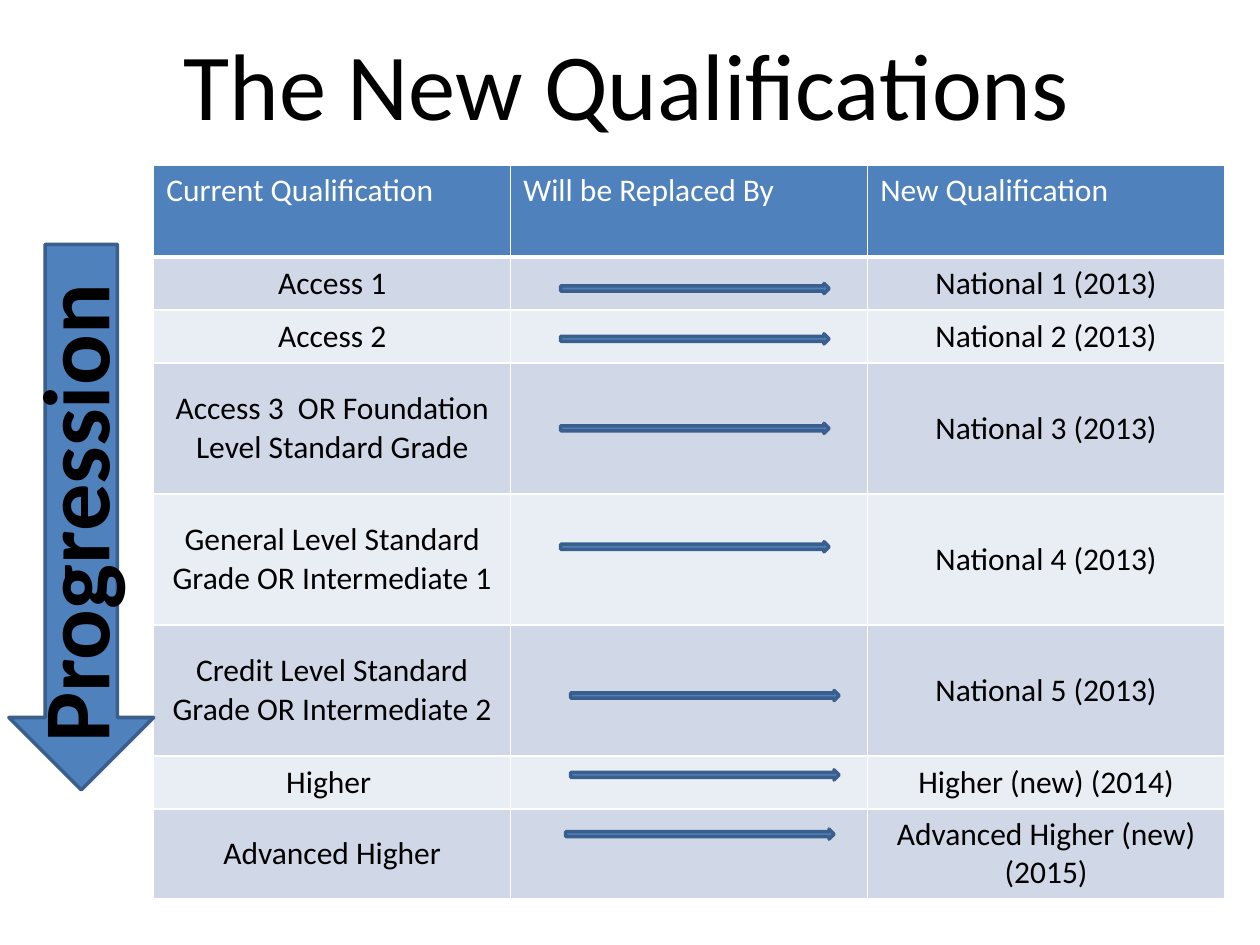
"""Build the slide that maps current qualifications to new ones."""
import lxml.etree
import pptx
import pptx.dml.color
import pptx.enum.shapes
import pptx.enum.text
import pptx.oxml.ns
import pptx.util

COLORS = {"blue": "4F81BD", "edge": "3A5F8C", "dark band": "D0D8E8",
          "light band": "E9EDF4", "white": "FFFFFF", "black": "000000"}
ROWS = [
    ("Current Qualification", "Will be Replaced By", "New Qualification", 9.73),
    ("Access 1", "", "National 1 (2013)", 5.6),
    ("Access 2", "", "National 2 (2013)", 5.6),
    ("Access 3  OR Foundation Level Standard Grade", "", "National 3 (2013)", 13.87),
    ("General Level Standard Grade OR Intermediate 1", "", "National 4 (2013)", 13.87),
    ("Credit Level Standard Grade OR Intermediate 2", "", "National 5 (2013)", 13.87),
    ("Higher ", "", "Higher (new) (2014)", 5.6),
    ("Advanced Higher", "", "Advanced Higher (new) (2015)", 5.6),
]
SHAPES = pptx.enum.shapes.MSO_SHAPE
ALIGN = pptx.enum.text.PP_ALIGN
ANCHOR = pptx.enum.text.MSO_ANCHOR

presentation = pptx.Presentation()
presentation.slide_width = pptx.util.Inches(10)
presentation.slide_height = pptx.util.Inches(7.5)
column = presentation.slide_width / 100
row = presentation.slide_height / 100
slide = presentation.slides.add_slide(presentation.slide_layouts[5])


def box(left, top, width, height):
    """Turn percentages of the slide into lengths."""
    return [round(share * unit) for share, unit in
            zip((left, top, width, height), (column, row, column, row))]


def write(paragraph, text, size, color, align, bold=False):
    """Add one formatted run to a paragraph."""
    paragraph.alignment = align
    run = paragraph.add_run()
    run.text = text
    run.font.name = "Calibri"
    run.font.size = pptx.util.Pt(size)
    run.font.bold = bold
    run.font.color.rgb = pptx.dml.color.RGBColor.from_string(COLORS[color])


title = slide.shapes.title
title.left, title.top, title.width, title.height = box(13.6, 2, 73.2, 13.47)
title.text_frame.word_wrap = True
write(title.text_frame.paragraphs[0], "The New Qualifications", 54, "black", ALIGN.LEFT)

table = slide.shapes.add_table(len(ROWS), 3, *box(12.2, 17.47, 85, 73.74)).table
for index, (*texts, height) in enumerate(ROWS):
    table.rows[index].height = round(height * row)
    header = index == 0
    fill = "blue" if header else "dark band" if index % 2 else "light band"
    for cell, text in zip(table.rows[index].cells, texts):
        properties = cell._tc.get_or_add_tcPr()
        for side in ("lnL", "lnR", "lnT", "lnB"):
            points = 3 if header and side == "lnB" else 1
            border = lxml.etree.SubElement(
                properties, pptx.oxml.ns.qn(f"a:{side}"), w=str(pptx.util.Pt(points)))
            solid = lxml.etree.SubElement(border, pptx.oxml.ns.qn("a:solidFill"))
            lxml.etree.SubElement(solid, pptx.oxml.ns.qn("a:srgbClr"), val=COLORS["white"])
        cell.fill.solid()
        cell.fill.fore_color.rgb = pptx.dml.color.RGBColor.from_string(COLORS[fill])
        cell.vertical_anchor = ANCHOR.TOP if header else ANCHOR.MIDDLE
        if text:
            write(cell.text_frame.paragraphs[0], text, 18,
                  "white" if header else "black",
                  ALIGN.LEFT if header else ALIGN.CENTER)

row_arrows = [(44.5, 30), (44.5, 35.33), (44.5, 44.8), (44.5, 57.33),
              (45.3, 73.07), (45.3, 81.47), (44.9, 87.73)]
arrows = [(SHAPES.DOWN_ARROW, (0.7, 25.87, 11.5, 57.73))]
arrows += [(SHAPES.RIGHT_ARROW, (left, top, 21.3, 1.07)) for left, top in row_arrows]
for kind, place in arrows:
    arrow = slide.shapes.add_shape(kind, *box(*place))
    arrow.shadow.inherit = False
    arrow.fill.solid()
    arrow.fill.fore_color.rgb = pptx.dml.color.RGBColor.from_string(COLORS["blue"])
    arrow.line.color.rgb = pptx.dml.color.RGBColor.from_string(COLORS["edge"])
    arrow.line.width = pptx.util.Pt(2)

progression = slide.shapes.add_textbox(*box(-14.8, 47.6, 41.1, 13.47))
progression.rotation = 270
progression.text_frame.word_wrap = True
write(progression.text_frame.paragraphs[0], "Progression", 54, "black", ALIGN.CENTER, True)

presentation.save("out.pptx")
